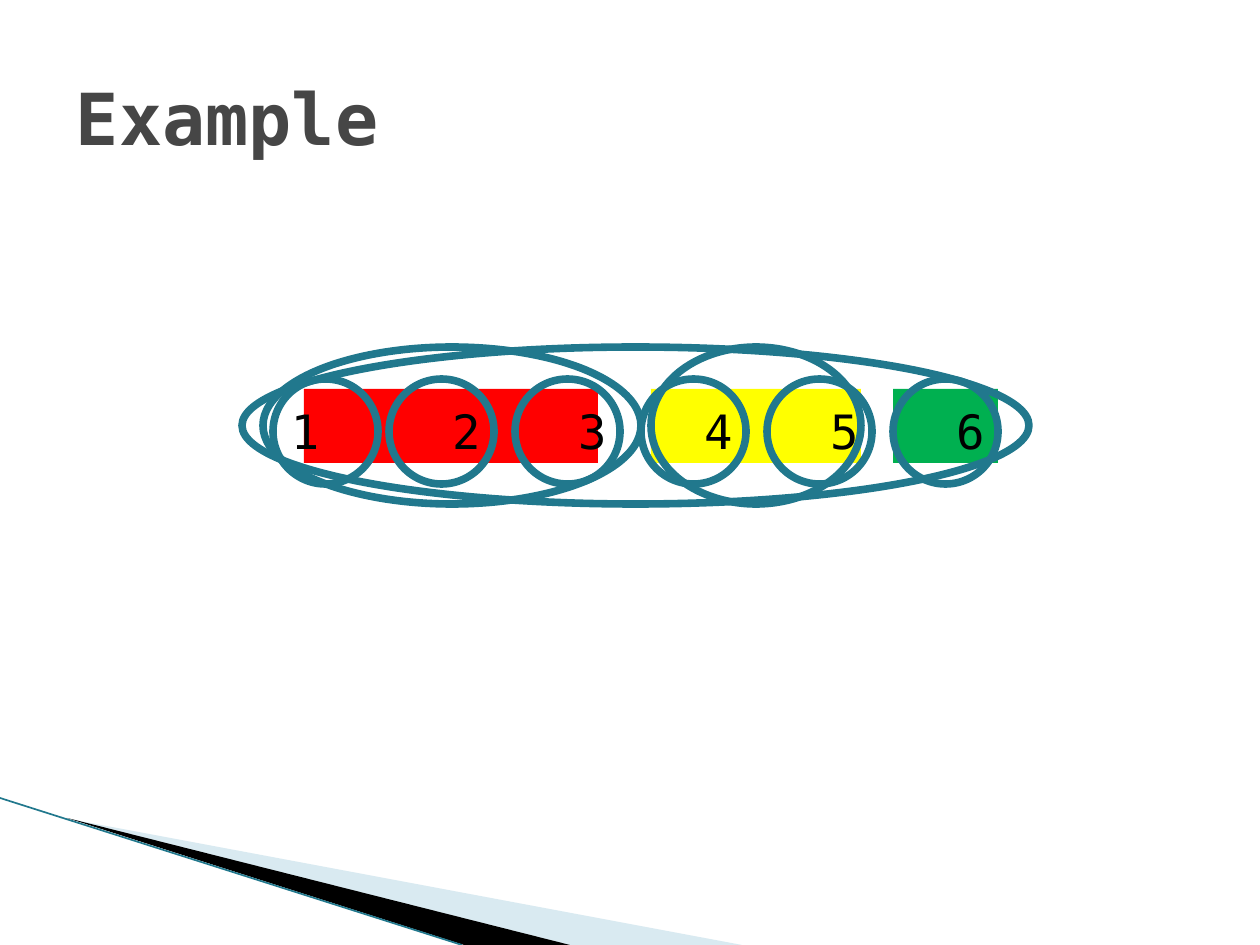
from lxml.etree import SubElement
from pptx import Presentation
from pptx.dml.color import RGBColor
from pptx.enum.shapes import MSO_CONNECTOR, MSO_SHAPE
from pptx.enum.text import MSO_ANCHOR
from pptx.oxml.ns import qn
from pptx.util import Pt

COLORS = {"red": "FF0000", "yellow": "FFFF00", "green": "00B050", "teal": "21788D",
          "pale": "A0CBDC", "black": "000000", "title": "464646"}
FONT = "DejaVu Sans Mono"
EMU_PER_PX = 9144000 / 1260


def px(n):
    return round(n * EMU_PER_PX)


def rgb(name):
    return RGBColor.from_string(COLORS[name])


def add_preset(s, kind, box, fill=None, line=None):
    sp = s.shapes.add_shape(kind, *map(px, box))
    sp.shadow.inherit = False
    if fill:
        sp.fill.solid()
        sp.fill.fore_color.rgb = rgb(fill)
    else:
        sp.fill.background()
    if line:
        sp.line.color.rgb = rgb(line)
        sp.line.width = Pt(4.33)
    else:
        sp.line.fill.background()


def add_text(s, box, text, size, color, bold=False, margin=0):
    sp = s.shapes.add_textbox(*map(px, box))
    tf = sp.text_frame
    tf.word_wrap = True
    tf.margin_left = tf.margin_right = px(margin)
    tf.margin_top = tf.margin_bottom = 0
    tf.vertical_anchor = MSO_ANCHOR.MIDDLE
    p = tf.paragraphs[0]
    r = p.add_run()
    r.text = text
    r.font.name, r.font.size, r.font.bold = FONT, Pt(size), bold
    r.font.color.rgb = rgb(color)
    return p


def add_wedge(s, points, fill, alpha=100):
    points = [(px(x), px(y)) for x, y in points]
    fb = s.shapes.build_freeform(*points[0])
    fb.add_line_segments(points[1:], close=True)
    sp = fb.convert_to_shape()
    sp.shadow.inherit = False
    sp.fill.solid()
    sp.fill.fore_color.rgb = rgb(fill)
    sp.line.fill.background()
    if alpha < 100:
        clr = sp._element.spPr.find(qn("a:solidFill"))[0]
        SubElement(clr, qn("a:alpha")).set("val", str(alpha * 1000))


def add_corner(s, x, y, w, h):
    """Swoosh in the lower left corner."""
    add_wedge(s, [(x + 69, y + 21), (x + w, y + h), (x + 570, y + h)], "pale", 40)
    add_wedge(s, [(x + 67, y + 20), (x + 570, y + h), (x + 464, y + h)], "black")
    cn = s.shapes.add_connector(MSO_CONNECTOR.STRAIGHT,
                                px(x), px(y), px(x + 462), px(y + h))
    cn.line.color.rgb = rgb("teal")
    cn.line.width = Pt(0.95)
    SubElement(cn._element.spPr, qn("a:effectLst"))


def add_clusters(s, x, y, w, h):
    """Six numbered points, their coloured groups and nested rings."""
    # Group bars
    for dx, width, color in ((651, 105, "green"), (409, 210, "yellow"), (62, 294, "red")):
        add_preset(s, MSO_SHAPE.RECTANGLE, (x + dx, y + 42, width, 74), fill=color)

    # Numbers on tab stops, one inch apart after the first
    p = add_text(s, (x + 49, y + 56, w - 49, 55), "1\t2\t3\t4\t5\t6", 27, "black")
    tabs = SubElement(p._p.get_or_add_pPr(), qn("a:tabLst"))
    for i in range(5):
        SubElement(tabs, qn("a:tab"), pos=str(px(161 + 126 * i)), algn="l")

    # Outer ring, then the rings of the two larger groups
    for dx, width in ((0, w), (21, 378), (409, 210)):
        add_preset(s, MSO_SHAPE.OVAL, (x + dx, y, width, h), line="teal")

    # One ring for each point
    for dx in (651, 525, 399, 273, 147, 31):
        add_preset(s, MSO_SHAPE.OVAL, (x + dx, y + 32, 105, 105), line="teal")


def main():
    prs = Presentation()
    prs.slide_width, prs.slide_height = px(1260), px(945)
    s = prs.slides.add_slide(prs.slide_layouts[6])
    add_corner(s, 0, 798, 742, 147)
    add_text(s, (63, 38, 1134, 158), "Example", 41, "title", bold=True, margin=13)
    add_clusters(s, 242, 347, 787, 157)
    prs.save("out.pptx")


if __name__ == "__main__":
    main()
